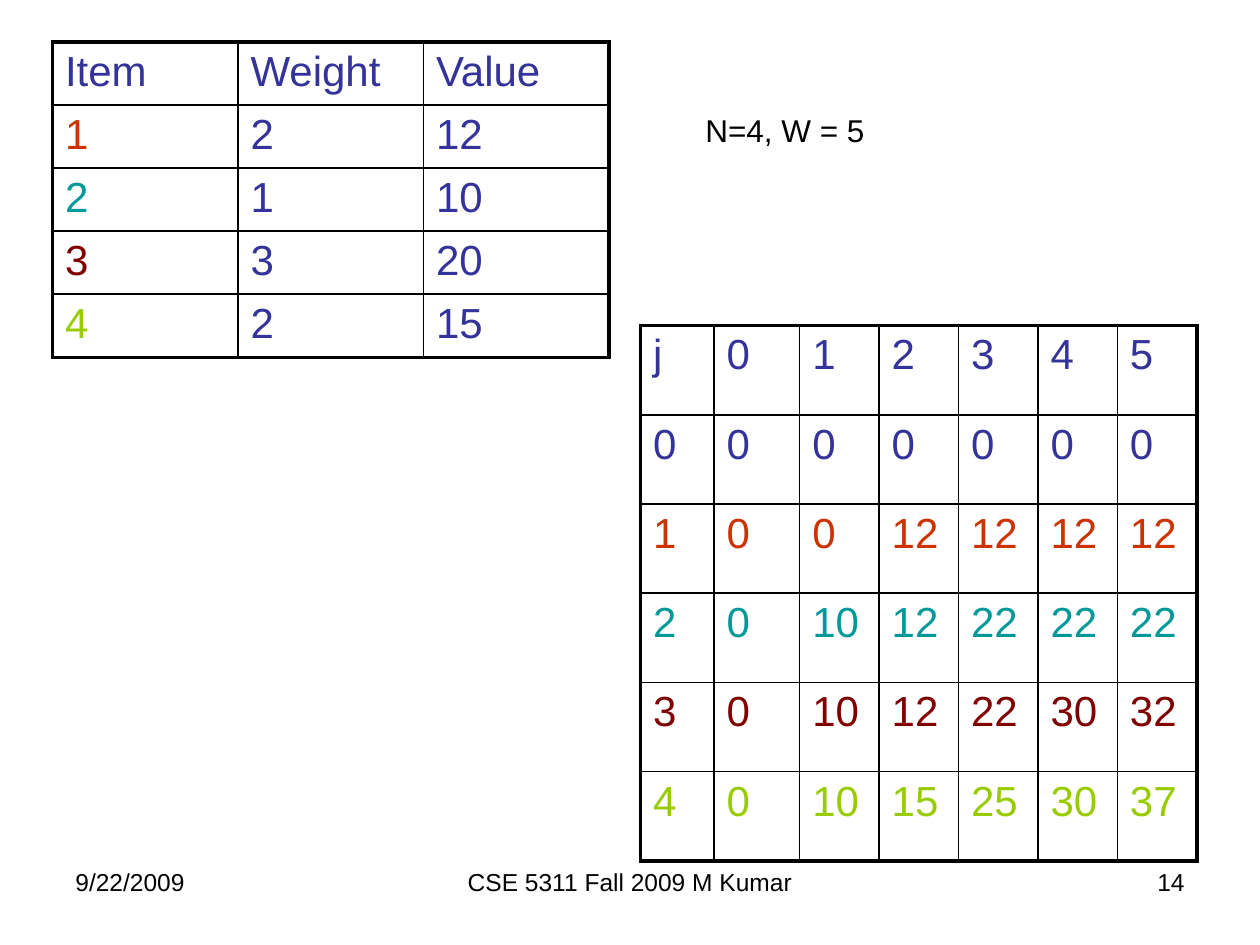
from dataclasses import dataclass

from lxml import etree
from pptx import Presentation
from pptx.dml import color
from pptx.enum import text
from pptx.oxml import ns
from pptx.util import Pt


@dataclass(frozen=True)
class Theme:
    """Colours, type sizes and line widths of the deck."""
    font: str = "Arial"
    ink: str = "000000"
    heading: str = "333399"
    items: tuple = ("CC3300", "009999", "800000", "99CC00")
    table_size: float = 24
    note_size: float = 18
    footer_size: float = 14
    outer_line: float = 2.25
    inner_line: float = 1


THEME = Theme()
ITEMS = [
    ("Item", "Weight", "Value"),
    (1, 2, 12),
    (2, 1, 10),
    (3, 3, 20),
    (4, 2, 15),
]
BEST_VALUES = [
    ("j", 0, 1, 2, 3, 4, 5),
    (0, 0, 0, 0, 0, 0, 0),
    (1, 0, 0, 12, 12, 12, 12),
    (2, 0, 10, 12, 22, 22, 22),
    (3, 0, 10, 12, 22, 30, 32),
    (4, 0, 10, 15, 25, 30, 37),
]


def write(frame, content, size, ink, align=text.PP_ALIGN.LEFT):
    """Fill a text frame with one formatted paragraph."""
    frame.text = str(content)
    para = frame.paragraphs[0]
    para.alignment = align
    font = para.runs[0].font
    font.name, font.size = THEME.font, Pt(size)
    font.color.rgb = color.RGBColor.from_string(ink)


def add_label(slide, content, left, top, width, height, size, align=text.PP_ALIGN.LEFT):
    """Add a wrapped text box."""
    box = slide.shapes.add_textbox(Pt(left), Pt(top), Pt(width), Pt(height))
    box.text_frame.word_wrap = True
    write(box.text_frame, content, size, THEME.ink, align)
    return box


def add_border(cell, side, width):
    """Draw one side of a table cell."""
    properties = cell._tc.get_or_add_tcPr()
    line = etree.SubElement(properties, ns.qn(f"a:ln{side}"), w=str(Pt(width)))
    fill = etree.SubElement(line, ns.qn("a:solidFill"))
    etree.SubElement(fill, ns.qn("a:srgbClr"), val=THEME.ink)


def add_grid(slide, rows, left, top, widths, row_height, ink_for):
    """Add a framed table whose text colour comes from ink_for(row, column)."""
    last_row, last_column = len(rows) - 1, len(widths) - 1
    table = slide.shapes.add_table(
        len(rows), len(widths), Pt(left), Pt(top),
        Pt(sum(widths)), Pt(row_height * len(rows))).table
    table.first_row = table.horz_banding = False
    for column, width in zip(table.columns, widths):
        column.width = Pt(width)
    for r, values in enumerate(rows):
        table.rows[r].height = Pt(row_height)
        for c, value in enumerate(values):
            cell = table.cell(r, c)
            write(cell.text_frame, value, THEME.table_size, ink_for(r, c))
            edges = {"L": c == 0, "R": c == last_column, "T": r == 0, "B": r == last_row}
            for side, is_outer in edges.items():
                add_border(cell, side, THEME.outer_line if is_outer else THEME.inner_line)
            cell.fill.background()


def item_ink(row, column):
    """Colour only the item numbers."""
    return THEME.items[row - 1] if row and column == 0 else THEME.heading


def best_value_ink(row, column):
    """Colour each whole row like its item."""
    return THEME.items[row - 2] if row > 1 else THEME.heading


def add_footer(slide):
    """Add date, course and page number along the bottom."""
    entries = [
        ("9/22/2009", 36, 168, text.PP_ALIGN.LEFT),
        ("CSE 5311 Fall 2009 M Kumar", 246, 228, text.PP_ALIGN.CENTER),
        ("14", 516, 168, text.PP_ALIGN.RIGHT),
    ]
    for content, left, width, align in entries:
        add_label(slide, content, left, 492, width, 37.5, THEME.footer_size, align)


def main():
    """Build the knapsack slide."""
    deck = Presentation()
    deck.slide_width, deck.slide_height = Pt(720), Pt(540)
    slide = deck.slides.add_slide(deck.slide_layouts[6])
    add_footer(slide)
    add_grid(slide, ITEMS, 30, 24, [106] * 3, 34.75, item_ink)
    add_grid(slide, BEST_VALUES, 366, 186, [42, 49] + [45.4] * 5, 51, best_value_ink)
    note = add_label(slide, "N=4, W = 5", 396, 60, 144, 29, THEME.note_size)
    note.text_frame.auto_size = text.MSO_AUTO_SIZE.SHAPE_TO_FIT_TEXT
    deck.save("out.pptx")


if __name__ == "__main__":
    main()
